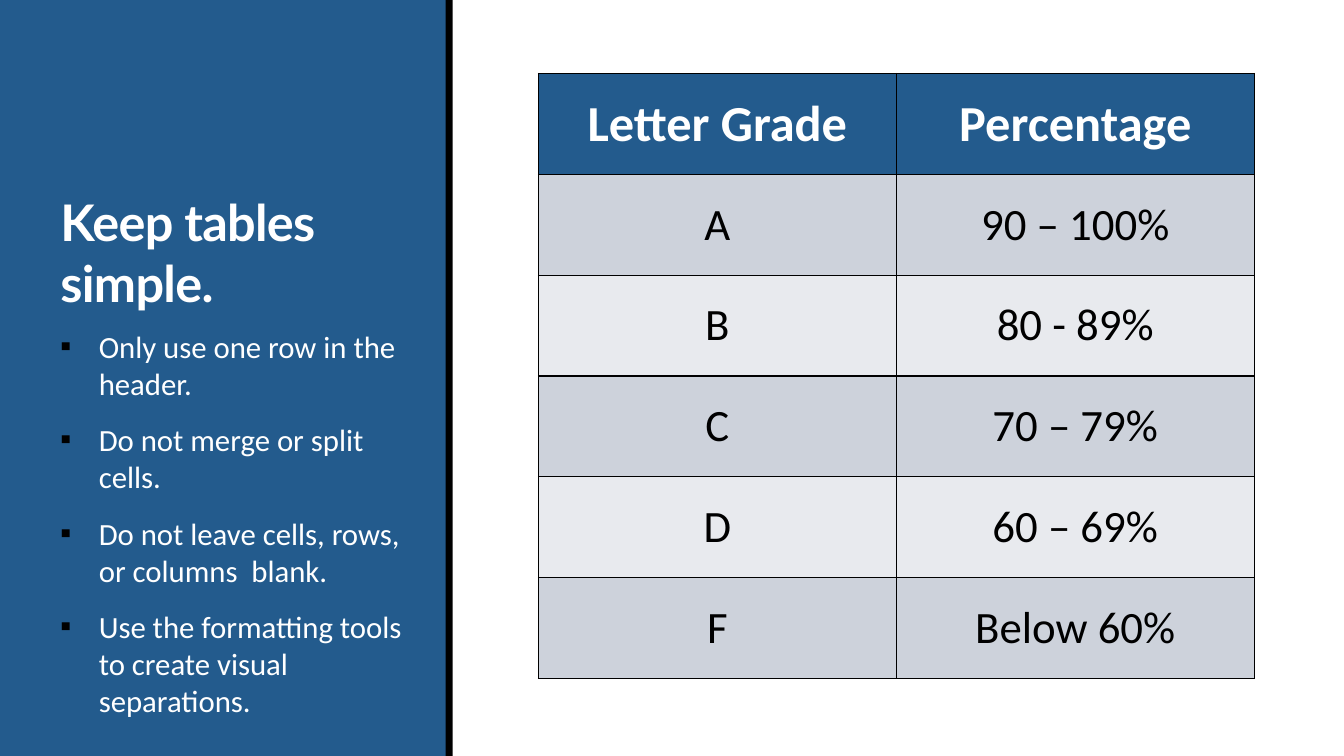
import pptx
import pptx.dml.color
import pptx.enum.shapes
import pptx.enum.text
import pptx.oxml.ns
import pptx.util
from lxml import etree

WIDTH, HEIGHT = 13.33, 7.5
BLUE, BLACK, WHITE = "235B8D", "000000", "FFFFFF"
BANDS = ("CDD2DB", "E8EAEE")
ADVICE = (
    "Only use one row in the header.",
    "Do not merge or split cells.",
    "Do not leave cells, rows, or columns  blank.",
    "Use the formatting tools to create visual separations.",
)
GRADES = (
    ("Letter Grade", "Percentage"),
    ("A", "90 – 100%"),
    ("B", "80 - 89%"),
    ("C", "70 – 79%"),
    ("D", "60 – 69%"),
    ("F", "Below 60%"),
)
ALIGN = pptx.enum.text.PP_ALIGN
ANCHOR = pptx.enum.text.MSO_ANCHOR


def color(value):
    return pptx.dml.color.RGBColor.from_string(value)


def inches(*lengths):
    return [pptx.util.Inches(length) for length in lengths]


def add_xml(parent, tag, **attributes):
    return etree.SubElement(parent, pptx.oxml.ns.qn(tag), attributes)


def write(para, text, size, ink, font="Calibri", bold=False, align=ALIGN.LEFT,
          before=0, after=0, tracking=None):
    para.alignment = align
    para.line_spacing = 1.0
    para.space_before = pptx.util.Pt(before)
    para.space_after = pptx.util.Pt(after)
    span = para.add_run()
    span.text = text
    span.font.name = font
    span.font.size = pptx.util.Pt(size)
    span.font.bold = bold
    span.font.color.rgb = color(ink)
    if tracking is not None:
        span.font._element.set("spc", str(round(tracking * 100)))


def place(holder, box, anchor):
    holder.left, holder.top, holder.width, holder.height = inches(*box)
    frame = holder.text_frame
    frame.word_wrap = True
    frame.auto_size = pptx.enum.text.MSO_AUTO_SIZE.NONE
    frame.vertical_anchor = anchor
    return frame


def add_bullet(para, indent):
    props = para._p.get_or_add_pPr()
    left = pptx.util.Inches(indent)
    props.set("marL", str(left))
    props.set("indent", str(-left))
    add_xml(add_xml(props, "a:buClr"), "a:srgbClr", val=BLACK)
    add_xml(props, "a:buFont", typeface="Calibri")
    add_xml(props, "a:buChar", char="▪")


def add_band(page, box, fill):
    band = page.shapes.add_shape(
        pptx.enum.shapes.MSO_SHAPE.RECTANGLE, *inches(*box))
    band.shadow.inherit = False
    band.fill.solid()
    band.fill.fore_color.rgb = color(fill)
    band.line.fill.background()
    page.shapes.title.element.addprevious(band.element)


def build_panel(page, box):
    left, top, width, height = box
    add_band(page, box, BLUE)
    add_band(page, (left + width - 0.01, top, 0.07, height), BLACK)

    title = place(page.shapes.title, (left + 0.5, top + 0.65, 3.5, 2.5), ANCHOR.BOTTOM)
    write(title.paragraphs[0], "Keep tables simple.", 36, WHITE, font="Lato",
          bold=True, after=18, tracking=-0.5)

    advice = place(page.placeholders[1], (left + 0.5, top + 3.2, 3.65, height - 3.2), ANCHOR.TOP)
    for index, text in enumerate(ADVICE):
        para = advice.add_paragraph() if index else advice.paragraphs[0]
        write(para, text, 22, WHITE, before=2, after=12)
        add_bullet(para, 0.38)


def add_borders(cell):
    props = cell._tc.get_or_add_tcPr()
    for index, side in enumerate(("a:lnL", "a:lnR", "a:lnT", "a:lnB")):
        line = etree.Element(pptx.oxml.ns.qn(side), w=str(pptx.util.Pt(1)))
        add_xml(add_xml(line, "a:solidFill"), "a:srgbClr", val=BLACK)
        props.insert(index, line)


def build_grades(page, box):
    table = page.shapes.add_table(len(GRADES), len(GRADES[0]), *inches(*box)).table
    for row, texts in enumerate(GRADES):
        header = row == 0
        for column, text in enumerate(texts):
            cell = table.cell(row, column)
            cell.vertical_anchor = ANCHOR.MIDDLE
            cell.fill.solid()
            cell.fill.fore_color.rgb = color(BLUE if header else BANDS[(row - 1) % 2])
            add_borders(cell)
            write(cell.text_frame.paragraphs[0], text, 36 if header else 32,
                  WHITE if header else BLACK, bold=header, align=ALIGN.CENTER)


def main():
    deck = pptx.Presentation()
    deck.slide_width, deck.slide_height = inches(WIDTH, HEIGHT)
    page = deck.slides.add_slide(deck.slide_layouts[1])
    page.background.fill.solid()
    page.background.fill.fore_color.rgb = color(WHITE)
    build_panel(page, (0, 0, 4.43, HEIGHT))
    build_grades(page, (5.34, 0.73, 7.1, 6))
    deck.save("out.pptx")


if __name__ == "__main__":
    main()
